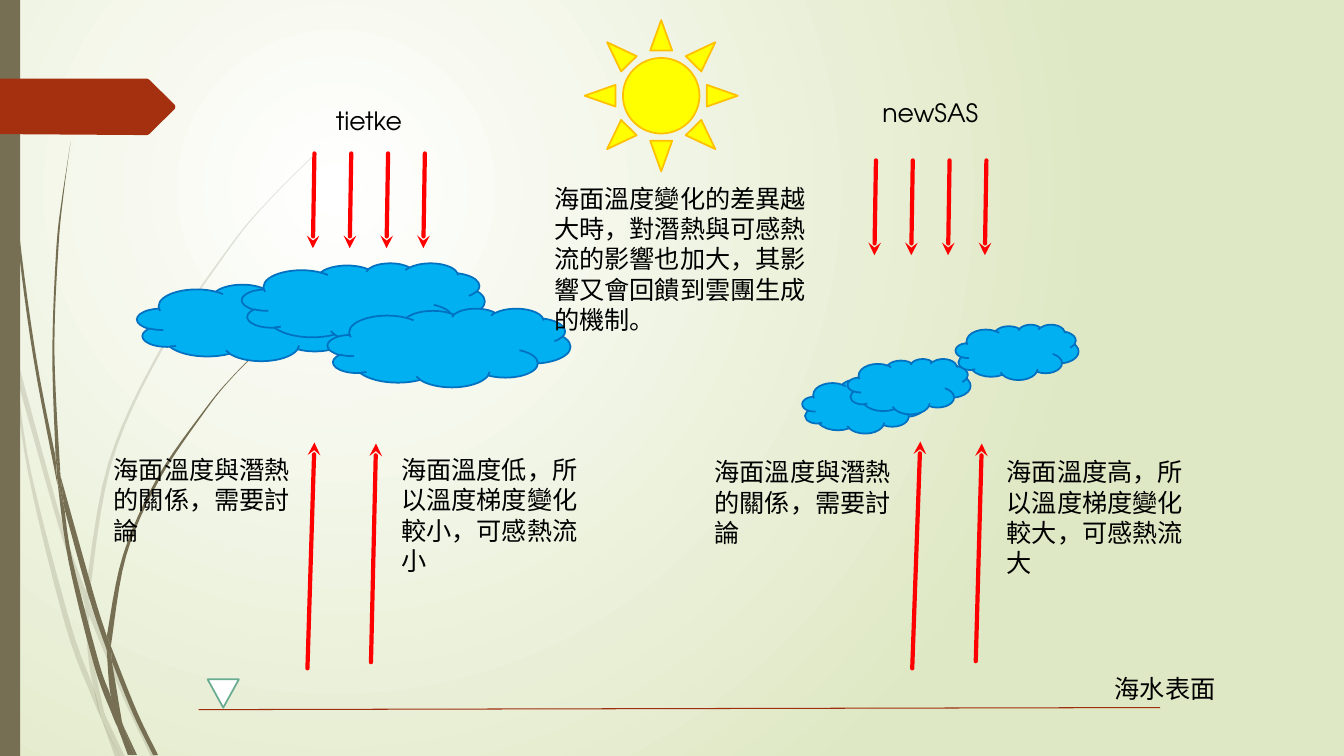
from dataclasses import dataclass

from lxml import etree
from pptx import Presentation
from pptx import util as u
from pptx.dml import color
from pptx.enum import shapes, text
from pptx.oxml import ns

WHITE = color.RGBColor(0xFF, 0xFF, 0xFF)
BLACK = color.RGBColor(0, 0, 0)
PALE_GREEN = color.RGBColor(0xDF, 0xE8, 0xC4)
OLIVE = color.RGBColor(0x76, 0x6F, 0x54)
RUST = color.RGBColor(0xA5, 0x30, 0x10)
SEA_LINE = color.RGBColor(0x9E, 0x2E, 0x0F)
TEAL = color.RGBColor(0x6A, 0xAC, 0x91)
SKY = color.RGBColor(0x00, 0xB0, 0xF0)
BLUE = color.RGBColor(0x00, 0x70, 0xC0)
YELLOW = color.RGBColor(0xFF, 0xFF, 0x00)
GOLD = color.RGBColor(0xFF, 0xC0, 0x00)
RED = color.RGBColor(0xFF, 0x00, 0x00)
FONT = "TeX Gyre Adventor"

Point = tuple[float, float]
Edge = list[Point]


@dataclass
class Wisp:
    outward: Edge
    back: Edge


@dataclass
class Figure:
    kind: shapes.MSO_SHAPE
    left: float
    top: float
    width: float
    height: float
    fill: color.RGBColor
    outline: color.RGBColor | None = None


@dataclass
class Label:
    words: str
    left: float
    top: float
    width: float
    height: float
    align: text.PP_ALIGN = text.PP_ALIGN.LEFT


@dataclass
class Arrow:
    begin: Point
    end: Point
    tip: str


FAINT_WISPS = [
    Wisp([(7.9, 252), (6.5, 231.8), (0, 203)], [(0, 215.3), (7.2, 247.7)]),
    Wisp([(10.1, 248.4), (44.6, 374.4), (61.2, 421.9)], [(60.5, 431.3), (41.8, 375.8), (12.2, 270.7)]),
    Wisp([(63.4, 429.1), (91.4, 498.2), (111.6, 540.7)], [(108, 540.7), (88.6, 499.7), (63.4, 439.2)]),
    Wisp([(75.6, 511.9), (89.3, 540.7)], [(85.7, 540.7)]),
    Wisp([(7.9, 252), (20.2, 338.4), (46.8, 447.1), (66.2, 499), (72.7, 514.1)],
         [(71.3, 509), (67, 491.8), (50.4, 445.7), (22.3, 337.7), (12.2, 270.7)]),
    Wisp([(60.5, 431.3), (62.6, 465.1), (67, 491.8), (75.6, 511.9)],
         [(74.2, 508.3), (65.5, 465.1), (63.4, 439.2)]),
    Wisp([(63.4, 429.1), (79.2, 332.6), (115.2, 251.3), (164.9, 176.4), (193, 142.6), (224.6, 110.9)],
         [(224.6, 110.2), (193, 141.8), (164.2, 175.7), (113.8, 250.6), (77, 331.9), (61.2, 421.9)]),
    Wisp([(72.7, 514.1), (82.1, 540.7)], [(85.7, 540.7)]),
    Wisp([(63.4, 439.2), (63.4, 429.1)], [(61.2, 421.9), (60.5, 431.3)]),
    Wisp([(67, 491.8), (72.7, 514.1), (85.7, 540.7)], [(75.6, 511.9), (69.1, 498.2)]),
]
DARK_WISPS = [
    Wisp([(2.2, 0), (2.9, 34.6), (5, 79.2), (12.2, 167.8), (23.8, 255.6), (41, 346.3)],
         [(39.6, 326.2), (25.9, 255.6), (13.7, 167), (5.8, 78.5), (3.6, 34.6), (2.9, 0)]),
    Wisp([(43.2, 339.8), (67, 424.8), (76.3, 454.3)], [(76.3, 464.4), (63.4, 426.2), (46.1, 363.6)]),
    Wisp([(79.2, 461.5), (97.9, 508.3), (113, 539.3)], [(109.4, 539.3), (95, 509.8), (79.9, 472.3)]),
    Wisp([(41, 343.4), (49, 401), (67, 474.5), (79.9, 509.8), (84.2, 519.8)],
         [(83.5, 516.2), (79.2, 497.5), (70.6, 473), (51.8, 400.3), (46.1, 363.6)]),
    Wisp([(43.2, 339.8), (38.9, 251.3), (41.8, 176.4), (45.4, 139), (50.4, 101.5)],
         [(44.6, 139), (40.3, 176.4), (37.4, 251.3), (39.6, 323.3)]),
    Wisp([(87.8, 517.7), (97.9, 539.3)], [(95.8, 539.3)]),
    Wisp([(41, 343.4), (46.1, 363.6)], [(43.2, 339.8), (39.6, 323.3)]),
    Wisp([(79.2, 461.5), (90, 397.4), (113.8, 342.7), (147.6, 292.3), (166.3, 269.3), (187.9, 247.7)],
         [(187.2, 247.7), (166.3, 268.6), (146.9, 291.6), (112.3, 341.3), (87.8, 396.7), (76.3, 454.3)]),
    Wisp([(84.2, 519.8), (91.4, 539.3)], [(94.3, 539.3)]),
    Wisp([(76.3, 464.4), (79.2, 497.5), (87.8, 517.7)], [(87.1, 515.5), (79.9, 472.3)]),
    Wisp([(76.3, 464.4), (79.9, 472.3)], [(79.2, 461.5), (76.3, 454.3)]),
    Wisp([(79.2, 497.5), (84.2, 519.8), (93.6, 539.3)], [(95.8, 539.3), (87.8, 517.7)]),
]
TAG = [(124.9, 77.8), (106.6, 95.8), (105.1, 96.5), (0, 95.8), (0, 56.2), (105.1, 56.2),
       (106.6, 56.9), (124.9, 74.9), (125.3, 76.3)]

CLOUD = shapes.MSO_SHAPE.CLOUD
TIETKE_CLOUDS = [Figure(CLOUD, left, top, 173.5, 56.2, SKY, BLUE)
                 for left, top in ((97.9, 201.6), (172.8, 187.9), (234, 220.3))]
NEWSAS_CLOUDS = [Figure(CLOUD, left, top, 87.8, 39.6, SKY, BLUE)
                 for left, top in ((573.1, 270), (605.5, 256.3), (682.6, 231.8))]
SUN = Figure(shapes.MSO_SHAPE.SUN, 417.6, 14.4, 109.4, 108, YELLOW, GOLD)
SEA_MARK = Figure(shapes.MSO_SHAPE.ISOSCELES_TRIANGLE, 148.3, 485.3, 22.3, 20.2, WHITE, TEAL)
SIDE_BAR = Figure(shapes.MSO_SHAPE.RECTANGLE, 0, 0, 14.4, 540, OLIVE)

SUNLIGHT = [[Arrow((left + 26.3 * i, top), (left + 26.3 * i - 1.1, top + 67.7), "tailEnd")
             for i in range(4)] for left, top in ((224.6, 109.6), (625.7, 114.6))]
HEAT_FLUX = [
    Arrow((224.6, 316.1), (219.6, 477.4), "headEnd"),
    Arrow((268.6, 316.8), (265, 473), "headEnd"),
    Arrow((657.4, 315.4), (651.6, 477.4), "headEnd"),
    Arrow((701.3, 316.8), (697, 472.3), "headEnd"),
]
LATENT_HEAT = "海面溫度與潛熱的關係，需要討論"
LABELS = [
    Label("海水表面", 789.1, 477.4, 93.6, 29.1),
    Label("tietke", 216, 72, 95, 29.1, text.PP_ALIGN.CENTER),
    Label("newSAS", 617, 65.8, 95, 29.1, text.PP_ALIGN.CENTER),
    Label("海面溫度變化的差異越大時，對潛熱與可感熱流的影響也加大，其影響又會回饋到雲團生成的機制。",
          388.8, 127.4, 197.3, 116.6),
    Label(LATENT_HEAT, 74.2, 321.1, 154.1, 72.7),
    Label(LATENT_HEAT, 503.3, 322.6, 154.1, 72.7),
    Label("海面溫度低，所以溫度梯度變化較小，可感熱流小", 279.4, 321.1, 154.1, 94.3),
    Label("海面溫度高，所以溫度梯度變化較大，可感熱流大", 712.1, 322.6, 154.1, 94.3),
]


def smooth(edge: Edge, steps: int = 6) -> Edge:
    padded = [edge[0], *edge, edge[-1]]
    points = [edge[0]]
    for before, start, end, after in zip(padded, padded[1:], padded[2:], padded[3:]):
        for step in range(1, steps + 1):
            t = step / steps
            points.append(tuple(
                b + ((c - a) * t + (2 * a - 5 * b + 4 * c - d) * t**2 + (3 * b - a - 3 * c + d) * t**3) / 2
                for a, b, c, d in zip(before, start, end, after)))
    return points


def draw_outline(container, points: Edge, fill: color.RGBColor, opacity: int = 100) -> None:
    corners = [(u.Pt(x), u.Pt(y)) for x, y in points]
    builder = container.build_freeform(*corners[0])
    builder.add_line_segments(corners[1:], close=True)
    shape = builder.convert_to_shape()
    shape.shadow.inherit = False
    shape.fill.solid()
    shape.fill.fore_color.rgb = fill
    shape.line.fill.background()
    if opacity < 100:
        tint = shape._element.spPr.find(".//" + ns.qn("a:srgbClr"))
        etree.SubElement(tint, ns.qn("a:alpha"), val=str(opacity * 1000))


def draw_figure(container, figure: Figure):
    box = [u.Pt(v) for v in (figure.left, figure.top, figure.width, figure.height)]
    shape = container.add_shape(figure.kind, *box)
    shape.shadow.inherit = False
    shape.fill.solid()
    shape.fill.fore_color.rgb = figure.fill
    if figure.outline is None:
        shape.line.fill.background()
    else:
        shape.line.color.rgb = figure.outline
        shape.line.width = u.Pt(1.25)
    return shape


def draw_line(container, begin: Point, end: Point, ink: color.RGBColor, width: float, tip: str = "") -> None:
    ends = [u.Pt(v) for v in (*begin, *end)]
    connector = container.add_connector(shapes.MSO_CONNECTOR.STRAIGHT, *ends)
    connector.line.color.rgb = ink
    connector.line.width = u.Pt(width)
    if tip:
        outline = connector.line._get_or_add_ln()
        outline.set("cap", "rnd")
        etree.SubElement(outline, ns.qn("a:" + tip), type="stealth")
    etree.SubElement(connector._element.spPr, ns.qn("a:effectLst"))


def draw_label(container, label: Label) -> None:
    box = container.add_textbox(*[u.Pt(v) for v in (label.left, label.top, label.width, label.height)])
    box.text_frame.word_wrap = True
    box.text_frame.auto_size = text.MSO_AUTO_SIZE.SHAPE_TO_FIT_TEXT
    paragraph = box.text_frame.paragraphs[0]
    paragraph.alignment = label.align
    run = paragraph.add_run()
    run.text = label.words
    run.font.name = FONT
    run.font.size = u.Pt(18)
    run.font.color.rgb = BLACK


def paint_background(slide) -> None:
    fill = slide.background.fill
    fill.gradient()
    for stop, tint in zip(fill.gradient_stops, (WHITE, PALE_GREEN)):
        stop.color.rgb = tint
    direction = slide._element.find(".//" + ns.qn("a:lin"))
    gradient = direction.getparent()
    gradient.remove(direction)
    circle = etree.SubElement(gradient, ns.qn("a:path"), path="circle")
    etree.SubElement(circle, ns.qn("a:fillToRect"), l="50000", t="50000", r="100000", b="100000")


def main() -> None:
    presentation = Presentation()
    presentation.slide_width, presentation.slide_height = u.Pt(960), u.Pt(540)
    slide = presentation.slides.add_slide(presentation.slide_layouts[6])
    canvas = slide.shapes
    paint_background(slide)
    for wisps, opacity in ((FAINT_WISPS, 20), (DARK_WISPS, 100)):
        group = canvas.add_group_shape().shapes
        for wisp in wisps:
            draw_outline(group, smooth(wisp.outward) + smooth(wisp.back), OLIVE, opacity)
    draw_figure(canvas, SIDE_BAR)
    draw_outline(canvas, TAG, RUST)
    draw_line(canvas, (141.8, 506.9), (828.7, 505.4), SEA_LINE, 0.75)
    draw_figure(canvas, SEA_MARK)._element.spPr.xfrm.set("flipV", "1")
    for clouds in (TIETKE_CLOUDS, NEWSAS_CLOUDS):
        group = canvas.add_group_shape().shapes
        for cloud in clouds:
            draw_figure(group, cloud)
    draw_figure(canvas, SUN)
    for arrows in SUNLIGHT:
        group = canvas.add_group_shape().shapes
        for arrow in arrows:
            draw_line(group, arrow.begin, arrow.end, RED, 3, arrow.tip)
    for arrow in HEAT_FLUX:
        draw_line(canvas, arrow.begin, arrow.end, RED, 3, arrow.tip)
    for label in LABELS:
        draw_label(canvas, label)
    presentation.save("out.pptx")


if __name__ == "__main__":
    main()
